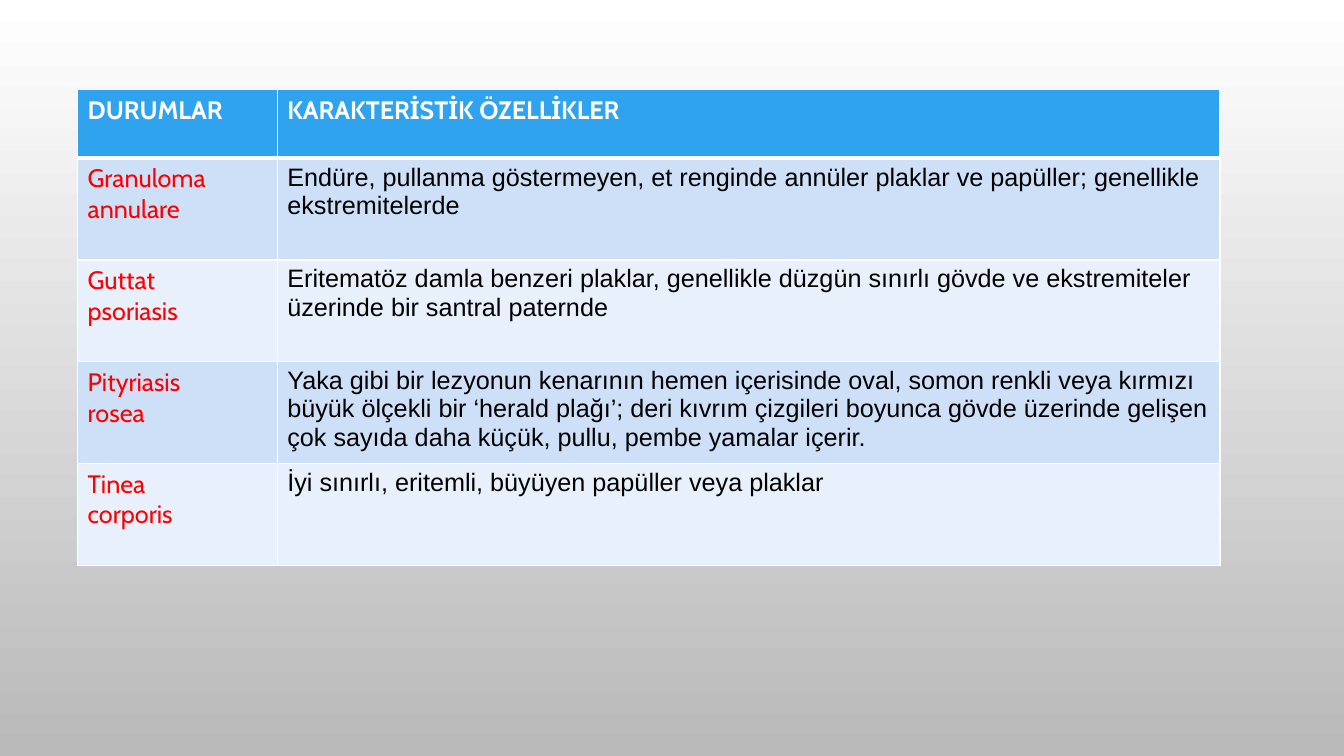
from pptx import Presentation
from pptx.dml.color import RGBColor
from pptx.oxml import parse_xml
from pptx.oxml.ns import nsdecls
from pptx.util import Inches, Pt

HEAD = ("DURUMLAR", "KARAKTERİSTİK ÖZELLİKLER")
ROWS = [
    ("Granuloma\nannulare",
     "Endüre, pullanma göstermeyen, et renginde annüler plaklar ve papüller; "
     "genellikle ekstremitelerde"),
    ("Guttat\npsoriasis",
     "Eritematöz damla benzeri plaklar, genellikle düzgün sınırlı gövde ve "
     "ekstremiteler üzerinde bir santral paternde"),
    ("Pityriasis\nrosea",
     "Yaka gibi bir lezyonun kenarının hemen içerisinde oval, somon renkli veya "
     "kırmızı büyük ölçekli bir ‘herald plağı’; deri kıvrım çizgileri boyunca gövde "
     "üzerinde gelişen çok sayıda daha küçük, pullu, pembe yamalar içerir."),
    ("Tinea\ncorporis",
     "İyi sınırlı, eritemli, büyüyen papüller veya plaklar"),
]
WIDTHS = (1.98, 9.35)
HEAD_H, ROW_H = 0.68, 1.01
BANDS = ("CDE0F8", "E8F0FC")
HEAD_STYLE = ("Cabin", "FFFFFF", True)
BODY_STYLES = (("Cabin", "FF0000", False), ("Arial", "000000", False))


def color(value):
    return RGBColor.from_string(value)


def add_edge(cell, side, width):
    cell._tc.get_or_add_tcPr().append(parse_xml(
        f'<a:ln{side} {nsdecls("a")} w="{Pt(width)}"><a:solidFill>'
        f'<a:srgbClr val="FFFFFF"/></a:solidFill></a:ln{side}>'))


def fill_cell(cell, text, style, fill, top, bottom):
    for side, width in (("L", 1), ("R", 1), ("T", top), ("B", bottom)):
        add_edge(cell, side, width)
    cell.fill.solid()
    cell.fill.fore_color.rgb = color(fill)
    cell.text_frame.text = text
    name, ink, bold = style
    for para in cell.text_frame.paragraphs:
        for run in para.runs:
            run.font.name = name
            run.font.size = Pt(18)
            run.font.bold = bold
            run.font.color.rgb = color(ink)


def main():
    deck = Presentation()
    deck.slide_width, deck.slide_height = Inches(13.33), Inches(7.5)
    slide = deck.slides.add_slide(deck.slide_layouts[6])

    back = slide.background.fill
    back.gradient()
    back.gradient_angle = 270
    for stop, place, tint in zip(back.gradient_stops, (0, 1), ("FFFFFF", "B9B9B9")):
        stop.position = place
        stop.color.rgb = color(tint)

    height = HEAD_H + ROW_H * len(ROWS)
    table = slide.shapes.add_table(
        len(ROWS) + 1, len(WIDTHS), Inches(0.77), Inches(0.89),
        Inches(sum(WIDTHS)), Inches(height)).table
    for col, width in zip(table.columns, WIDTHS):
        col.width = Inches(width)
    for i, row in enumerate(table.rows):
        row.height = Inches(ROW_H if i else HEAD_H)

    for j, text in enumerate(HEAD):
        fill_cell(table.cell(0, j), text, HEAD_STYLE, "2FA3EE", 1, 3)
    for i, texts in enumerate(ROWS):
        for j, text in enumerate(texts):
            fill_cell(table.cell(i + 1, j), text, BODY_STYLES[j],
                      BANDS[i % 2], 1 if i else 3, 1)

    deck.save("out.pptx")


if __name__ == "__main__":
    main()
